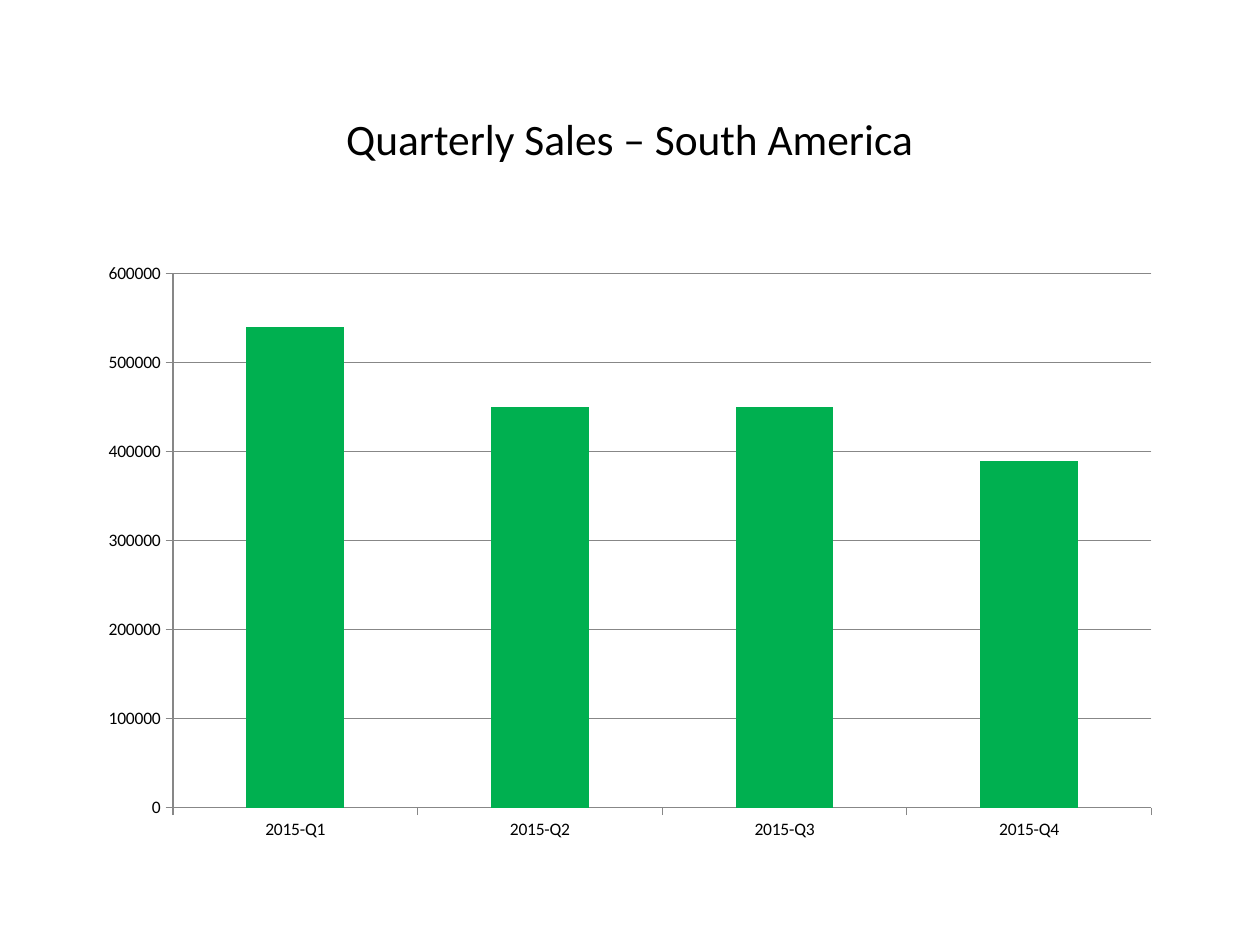
from dataclasses import dataclass

from pptx import Presentation
from pptx.chart.data import CategoryChartData as ChartData
from pptx.dml.color import RGBColor as Color
from pptx.enum.chart import XL_CHART_TYPE as ChartType, XL_TICK_MARK as Tick
from pptx.enum.text import MSO_ANCHOR as Anchor, PP_ALIGN as Align
from pptx.util import Inches, Pt


@dataclass(frozen=True)
class Theme:
    font: str = "Calibri"
    text: Color = Color(0x00, 0x00, 0x00)
    bar: Color = Color(0x00, 0xB0, 0x50)
    rule: Color = Color(0x87, 0x87, 0x87)
    title_size: Pt = Pt(24.8)
    label_size: Pt = Pt(10)


THEME = Theme()
TITLE_ONLY = 5
LEFT, WIDTH = Inches(0.69), Inches(8.62)
TITLE_BOX = (LEFT, Inches(0.4), WIDTH, Inches(1.45))
CHART_BOX = (LEFT, Inches(2), WIDTH, Inches(4.76))

QUARTERLY_SALES = {
    "2015-Q1": 540000,
    "2015-Q2": 450000,
    "2015-Q3": 450000,
    "2015-Q4": 390000,
}


def set_all(target, values):
    for name, value in values.items():
        setattr(target, name, value)


def style_font(font, size):
    set_all(font, {"name": THEME.font, "size": size, "bold": False})
    font.color.rgb = THEME.text


def place_title(page, box, wording):
    title = page.shapes.title
    set_all(title, dict(zip(("left", "top", "width", "height"), box)))
    frame = title.text_frame
    set_all(frame, {"word_wrap": True, "vertical_anchor": Anchor.MIDDLE})
    para = frame.paragraphs[0]
    set_all(para, {"alignment": Align.CENTER, "line_spacing": 0.9})
    span = para.add_run()
    span.text = wording
    style_font(span.font, THEME.title_size)


def place_sales_chart(page, box, sales):
    data = ChartData()
    data.categories = list(sales)
    data.add_series("Series 1", list(sales.values()))
    chart = page.shapes.add_chart(ChartType.COLUMN_CLUSTERED, *box, data).chart
    set_all(chart, {"has_legend": False, "has_title": False})
    style_font(chart.font, THEME.label_size)

    # Columns
    plot = chart.plots[0]
    set_all(plot, {"gap_width": 150, "vary_by_categories": False})
    fill = plot.series[0].format.fill
    fill.solid()
    fill.fore_color.rgb = THEME.bar

    # Axes and gridlines
    for axis in (chart.category_axis, chart.value_axis):
        set_all(axis, {"major_tick_mark": Tick.OUTSIDE,
                       "minor_tick_mark": Tick.NONE})
        axis.format.line.color.rgb = THEME.rule
    scale = chart.value_axis
    set_all(scale, {"minimum_scale": 0, "maximum_scale": 600000,
                    "major_unit": 100000, "has_major_gridlines": True})
    scale.major_gridlines.format.line.color.rgb = THEME.rule
    set_all(scale.tick_labels, {"number_format": "0",
                                "number_format_is_linked": False})


def main():
    deck = Presentation()
    set_all(deck, {"slide_width": Inches(10), "slide_height": Inches(7.5)})
    page = deck.slides.add_slide(deck.slide_layouts[TITLE_ONLY])
    place_title(page, TITLE_BOX, "Quarterly Sales – South America")
    place_sales_chart(page, CHART_BOX, QUARTERLY_SALES)
    deck.save("out.pptx")


if __name__ == "__main__":
    main()
